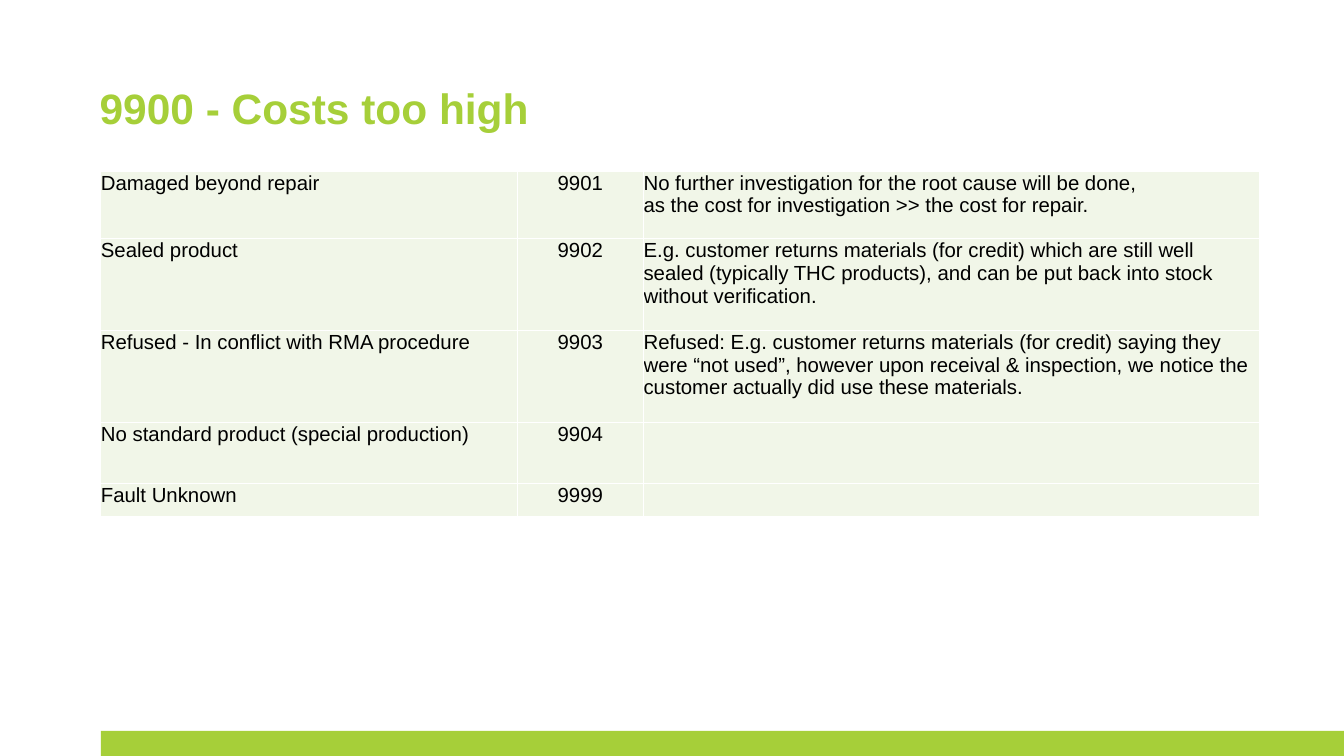
from dataclasses import dataclass

from lxml.etree import SubElement
from pptx import Presentation
from pptx.dml.color import RGBColor
from pptx.enum.shapes import MSO_SHAPE
from pptx.enum.text import MSO_ANCHOR, PP_ALIGN
from pptx.oxml.ns import qn
from pptx.util import Inches, Pt


@dataclass(frozen=True)
class Theme:
    """Colours, type sizes and spacing of the deck."""

    accent: str = "A6CF39"
    cell: str = "F1F6E8"
    border: str = "FFFFFF"
    text: str = "000000"
    font: str = "Arial"
    title_size: int = 50
    body_size: int = 24
    border_width: int = 1
    cell_margin: float = 0.01


class SlideBuilder:
    """Draws elements on one page, with lengths in percent of its size."""

    def __init__(self, deck, theme):
        """Add a title-only page to the deck."""
        self.deck = deck
        self.theme = theme
        self.page = deck.slides.add_slide(deck.slide_layouts[5])

    def across(self, percent):
        """Return a share of the page width."""
        return round(self.deck.slide_width * percent / 100)

    def down(self, percent):
        """Return a share of the page height."""
        return round(self.deck.slide_height * percent / 100)

    def area(self, left, top, width, height):
        """Return a box as lengths."""
        return self.across(left), self.down(top), self.across(width), self.down(height)

    def style(self, para, size, colour, bold=False, align=PP_ALIGN.LEFT):
        """Set the font and alignment of a paragraph."""
        para.alignment = align
        para.font.name = self.theme.font
        para.font.size = Pt(size)
        para.font.bold = bold
        para.font.color.rgb = RGBColor.from_string(colour)

    def title(self, text, *box):
        """Place and fill the title placeholder."""
        title = self.page.shapes.title
        title.left, title.top, title.width, title.height = self.area(*box)
        frame = title.text_frame
        frame.text = text
        frame.margin_left = frame.margin_right = frame.margin_top = frame.margin_bottom = 0
        frame.vertical_anchor = MSO_ANCHOR.MIDDLE
        self.style(frame.paragraphs[0], self.theme.title_size, self.theme.accent, bold=True)

    def bar(self, *box):
        """Draw a plain accent bar."""
        bar = self.page.shapes.add_shape(MSO_SHAPE.RECTANGLE, *self.area(*box))
        bar.shadow.inherit = False
        bar.fill.solid()
        bar.fill.fore_color.rgb = RGBColor.from_string(self.theme.accent)
        bar.line.fill.background()

    def table(self, left, top, widths, heights, rows, aligns):
        """Draw a table with one alignment per column."""
        box = self.area(left, top, sum(widths), sum(heights))
        table = self.page.shapes.add_table(len(rows), len(widths), *box).table
        table.first_row = table.horz_banding = False
        for column, width in zip(table.columns, widths):
            column.width = self.across(width)
        for row, height, texts in zip(table.rows, heights, rows):
            row.height = self.down(height)
            for cell, text, align in zip(row.cells, texts, aligns):
                self.cell(cell, text, align)

    def cell(self, cell, text, align):
        """Fill and format one table cell."""
        cell.text = text
        cell.margin_left = cell.margin_right = cell.margin_top = Inches(self.theme.cell_margin)
        cell.margin_bottom = 0
        cell.vertical_anchor = MSO_ANCHOR.TOP
        for para in cell.text_frame.paragraphs:
            self.style(para, self.theme.body_size, self.theme.text, align=align)
        self.borders(cell)
        cell.fill.solid()
        cell.fill.fore_color.rgb = RGBColor.from_string(self.theme.cell)

    def borders(self, cell):
        """Line all four sides of a cell."""
        properties = cell._tc.get_or_add_tcPr()
        for side in ("a:lnL", "a:lnR", "a:lnT", "a:lnB"):
            line = SubElement(properties, qn(side), w=str(Pt(self.theme.border_width)))
            SubElement(SubElement(line, qn("a:solidFill")), qn("a:srgbClr"), val=self.theme.border)


FAULTS = [
    ("Damaged beyond repair", "9901",
     "No further investigation for the root cause will be done,\n"
     "as the cost for investigation >> the cost for repair."),
    ("Sealed product", "9902",
     "E.g. customer returns materials (for credit) which are still well sealed "
     "(typically THC products), and can be put back into stock without verification."),
    ("Refused - In conflict with RMA procedure", "9903",
     "Refused: E.g. customer returns materials (for credit) saying they were “not used”, "
     "however upon receival & inspection, we notice the customer actually did use these materials."),
    ("No standard product (special production)", "9904", ""),
    ("Fault Unknown", "9999", ""),
]


def main():
    """Build and save the deck."""
    deck = Presentation()
    deck.slide_width, deck.slide_height = Inches(21.99), Inches(12.37)
    builder = SlideBuilder(deck, Theme())
    builder.bar(7.5, 96.69, 92.5, 3.31)
    builder.title("9900 - Costs too high", 7.41, 10.75, 85.13, 6.87)
    builder.table(
        7.46, 22.64,
        widths=(31.06, 9.32, 45.84),
        heights=(8.93, 12.13, 12.13, 8.16, 4.29),
        rows=FAULTS,
        aligns=(PP_ALIGN.LEFT, PP_ALIGN.CENTER, PP_ALIGN.LEFT),
    )
    deck.save("out.pptx")


if __name__ == "__main__":
    main()
